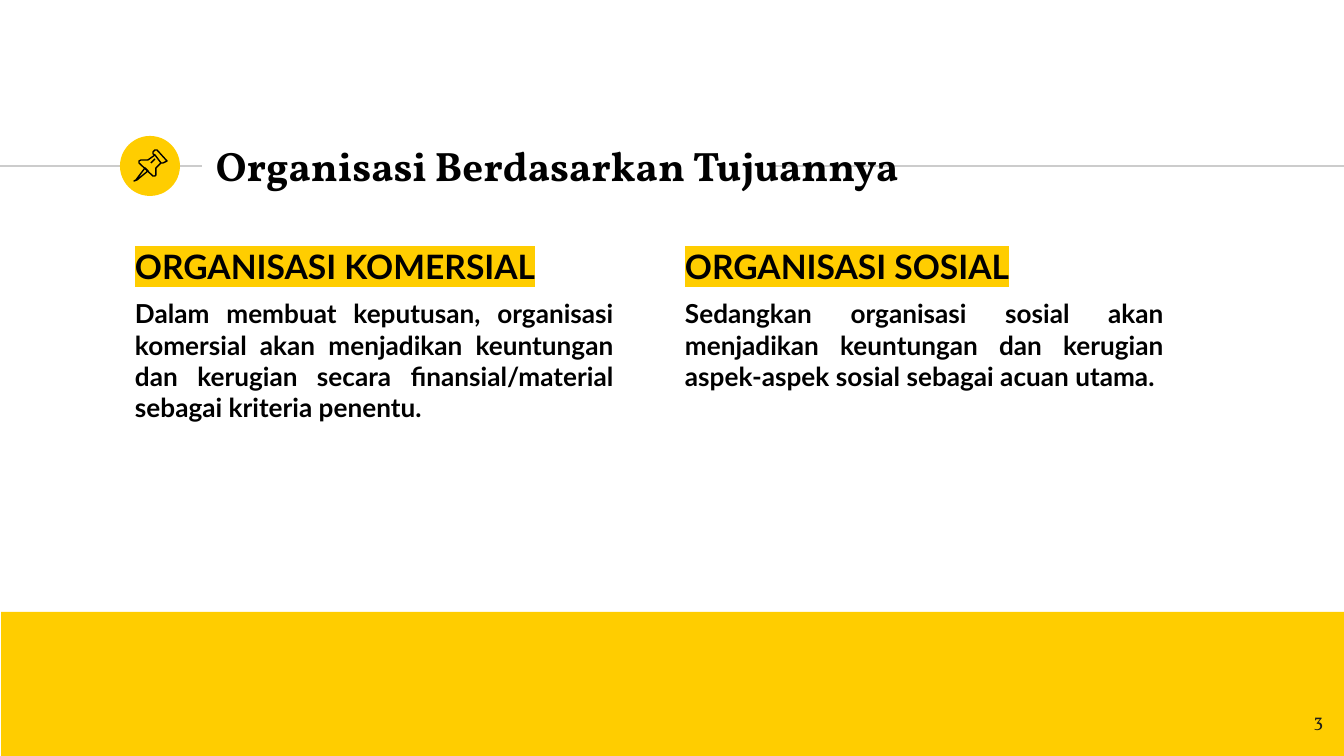
from lxml import etree
from pptx import Presentation
from pptx.dml.color import RGBColor
from pptx.enum.shapes import MSO_CONNECTOR, MSO_SHAPE
from pptx.enum.text import MSO_ANCHOR, PP_ALIGN
from pptx.oxml.ns import qn
from pptx.util import Pt

EMU_PER_PX = 914400 / 134.4
WIDTH, HEIGHT = 1344, 756

STRAIGHT = MSO_CONNECTOR.STRAIGHT
OVAL, RECTANGLE = MSO_SHAPE.OVAL, MSO_SHAPE.RECTANGLE
TOP, MIDDLE = MSO_ANCHOR.TOP, MSO_ANCHOR.MIDDLE
LEFT, RIGHT, JUSTIFY = PP_ALIGN.LEFT, PP_ALIGN.RIGHT, PP_ALIGN.JUSTIFY

YELLOW = RGBColor(0xFF, 0xCD, 0x00)
GREY = RGBColor(0xCC, 0xCC, 0xCC)
BLACK = RGBColor(0x00, 0x00, 0x00)
CHARCOAL = RGBColor(0x1D, 0x1D, 0x1B)
HEADING_FONT, BODY_FONT = "Vollkorn", "Lato"


def px(length):
    return round(length * EMU_PER_PX)


class SlideBuilder:
    line_width = Pt(0.75)
    inset = px(13)

    def __init__(self, slide):
        self.slide = slide
        self.shapes = slide.shapes

    def line(self, x1, y1, x2, y2, color):
        connector = self.shapes.add_connector(STRAIGHT, px(x1), px(y1), px(x2), px(y2))
        connector.line.color.rgb = color
        connector.line.width = self.line_width
        etree.SubElement(connector._element.spPr, qn("a:effectLst"))

    def block(self, kind, left, top, width, height, color):
        shape = self.shapes.add_shape(kind, px(left), px(top), px(width), px(height))
        shape.shadow.inherit = False
        shape.fill.solid()
        shape.fill.fore_color.rgb = color
        shape.line.fill.background()

    def outline(self, points, closed):
        builder = self.shapes.build_freeform(*points[0], scale=EMU_PER_PX)
        builder.add_line_segments(points[1:], close=closed)
        shape = builder.convert_to_shape()
        shape.shadow.inherit = False
        shape.fill.background()
        shape.line.color.rgb = BLACK
        shape.line.width = self.line_width

    def text_box(self, left, top, width, height, anchor=TOP):
        box = self.shapes.add_textbox(px(left), px(top), px(width), px(height))
        frame = box.text_frame
        frame.word_wrap = True
        frame.vertical_anchor = anchor
        frame.margin_left = frame.margin_right = self.inset
        frame.margin_top = frame.margin_bottom = self.inset
        return frame

    def text_run(self, paragraph, text, size, font, color=BLACK, bold=True,
                 align=LEFT, highlight=None):
        paragraph.alignment = align
        run = paragraph.add_run()
        run.text = text
        run.font.size = Pt(size)
        run.font.bold = bold
        run.font.color.rgb = color
        run.font.name = font
        if highlight is not None:
            marker = etree.Element(qn("a:highlight"))
            etree.SubElement(marker, qn("a:srgbClr"), val=str(highlight))
            run._r.rPr.find(qn("a:solidFill")).addnext(marker)

    def column(self, left, heading, body):
        frame = self.text_box(left, 233, 505, 324)
        self.text_run(frame.paragraphs[0], heading, 18, BODY_FONT, highlight=YELLOW)
        paragraph = frame.add_paragraph()
        paragraph.space_before = Pt(6)
        self.text_run(paragraph, body, 14, BODY_FONT, align=JUSTIFY)


# Pushpin outlines: (points, closed)
PUSHPIN = [
    # Needle
    ([(145, 168), (136, 180), (134, 181), (137, 180), (148, 171)], True),
    # Cap
    ([(155, 155), (161, 163), (163, 163), (165, 162), (167, 161), (166, 160),
      (157, 150), (155, 150), (153, 152), (153, 154)], True),
    # Body
    ([(155, 155), (148, 160), (145, 160), (141, 160), (139, 161), (139, 163),
      (153, 176), (155, 176), (156, 175), (156, 172), (156, 168), (161, 163)], False),
    # Highlight
    ([(151, 163), (155, 159)], False),
]

COLUMNS = [
    (122, "ORGANISASI KOMERSIAL",
     "Dalam membuat keputusan, organisasi komersial akan menjadikan keuntungan "
     "dan kerugian secara finansial/material sebagai kriteria penentu."),
    (672, "ORGANISASI SOSIAL",
     "Sedangkan organisasi sosial akan menjadikan keuntungan dan kerugian "
     "aspek-aspek sosial sebagai acuan utama."),
]


def main():
    presentation = Presentation()
    presentation.slide_width = px(WIDTH)
    presentation.slide_height = px(HEIGHT)
    slide = presentation.slides.add_slide(presentation.slide_layouts[6])
    builder = SlideBuilder(slide)

    # Title rule, badge and bottom band
    builder.line(0, 166, 202, 166, GREY)
    builder.block(OVAL, 120, 136, 60, 60, YELLOW)
    builder.line(774, 166, WIDTH, 166, GREY)
    builder.block(RECTANGLE, 1, 612, WIDTH - 1, HEIGHT - 612, YELLOW)

    # Title
    title = builder.text_box(203, 133, 742, 65, MIDDLE)
    builder.text_run(title.paragraphs[0], "Organisasi Berdasarkan Tujuannya", 22, HEADING_FONT)

    # Pushpin icon
    for points, closed in PUSHPIN:
        builder.outline(points, closed)

    # Text columns
    for left, heading, body in COLUMNS:
        builder.column(left, heading, body)

    # Slide number
    number = builder.text_box(1255, 698, 81, 58)
    builder.text_run(number.paragraphs[0], "3", 10, HEADING_FONT, CHARCOAL, False, RIGHT)

    presentation.save("out.pptx")


if __name__ == "__main__":
    main()
